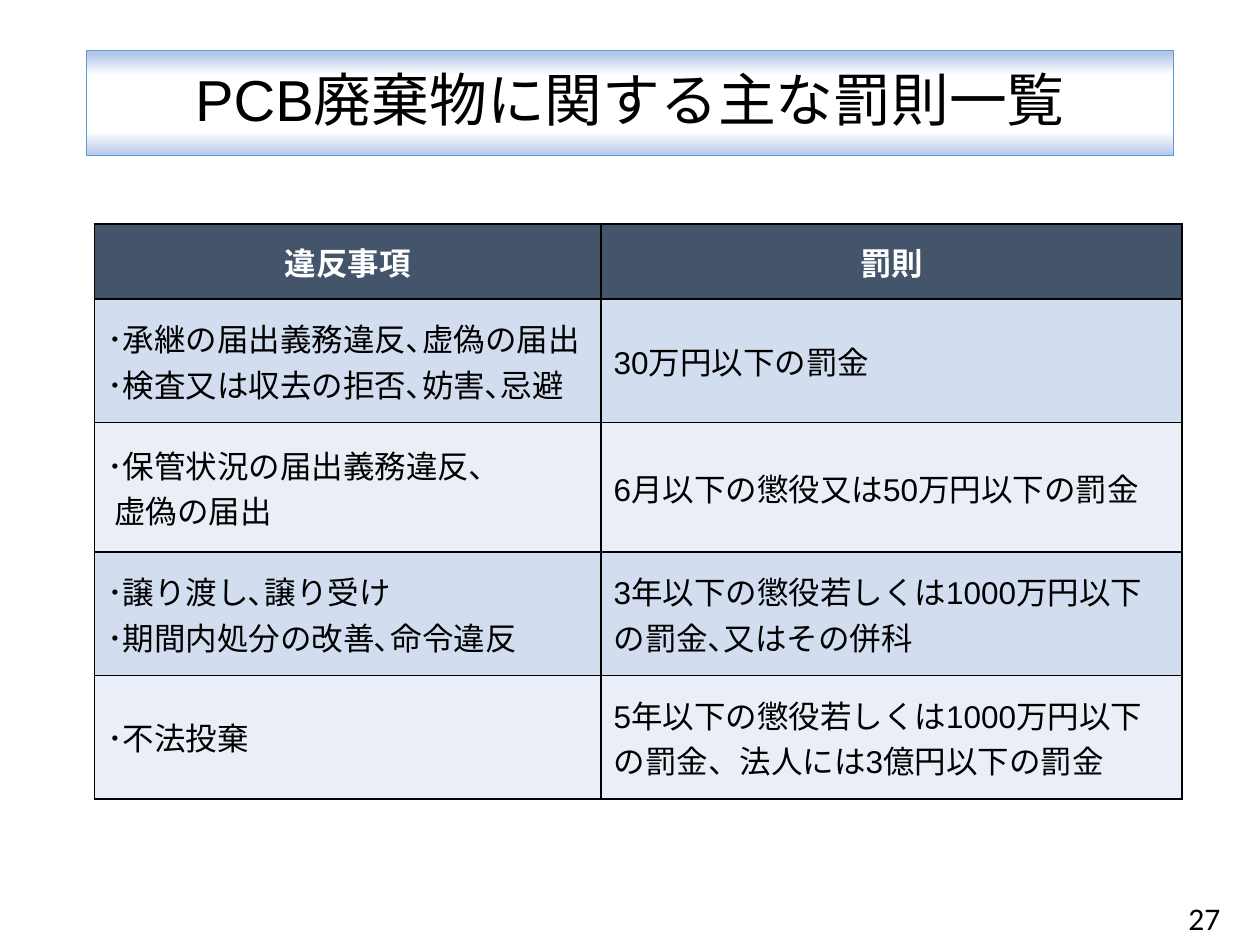
from lxml import etree
from pptx import Presentation
from pptx.dml.color import RGBColor
from pptx.enum.lang import MSO_LANGUAGE_ID
from pptx.enum.shapes import MSO_SHAPE
from pptx.enum.text import MSO_ANCHOR, PP_ALIGN
from pptx.oxml.ns import qn
from pptx.util import Pt

RECTANGLE = MSO_SHAPE.RECTANGLE
MIDDLE = MSO_ANCHOR.MIDDLE
LEFT, CENTER = PP_ALIGN.LEFT, PP_ALIGN.CENTER
JAPANESE = MSO_LANGUAGE_ID.JAPANESE

BLACK, WHITE = "000000", "FFFFFF"
HEADER_FILL = "44546A"
BAND_FILLS = ("D2DEEF", "EAEFF7")
TITLE_LINE = "5B9BD5"
TITLE_GRADIENT = [(3, "B4C7E7"), (23, WHITE), (77, WHITE), (100, "B4C7E7")]

HEADERS = ("違反事項", "罰則")
PENALTIES = [
    ("･承継の届出義務違反､虚偽の届出\n･検査又は収去の拒否､妨害､忌避", "30万円以下の罰金"),
    ("･保管状況の届出義務違反､\n 虚偽の届出", "6月以下の懲役又は50万円以下の罰金"),
    ("･譲り渡し､譲り受け\n･期間内処分の改善､命令違反",
     "3年以下の懲役若しくは1000万円以下の罰金､又はその併科"),
    ("･不法投棄", "5年以下の懲役若しくは1000万円以下の罰金、法人には3億円以下の罰金"),
]
COLUMN_WIDTHS = (289.5, 332)
ROW_HEIGHTS = (43, 70.5, 74, 70.5, 70.5)


def color(value):
    return RGBColor.from_string(value)


def write_text(frame, text, font="Arial", size=18, fill=BLACK, bold=False,
               align=LEFT, spacing=None):
    """Write one paragraph for each line of the text."""
    for index, line in enumerate(text.split("\n")):
        paragraph = frame.add_paragraph() if index else frame.paragraphs[0]
        paragraph.alignment = align
        paragraph.line_spacing = spacing
        run = paragraph.add_run()
        run.text = line
        run.font.name = font
        run.font.size = Pt(size)
        run.font.bold = bold
        run.font.color.rgb = color(fill)
        run.font.language_id = JAPANESE


def set_gradient(shape, stops, angle):
    """Give the shape a linear gradient with any number of stops."""
    shape.fill.gradient()
    shape.fill.gradient_angle = 0
    gradient = shape.fill._xPr.find(qn("a:gradFill"))
    stop_list = gradient.find(qn("a:gsLst"))
    for old_stop in list(stop_list):
        stop_list.remove(old_stop)
    for position, value in stops:
        stop = etree.SubElement(stop_list, qn("a:gs"), pos=str(position * 1000))
        etree.SubElement(stop, qn("a:srgbClr"), val=value)
    gradient.find(qn("a:lin")).set("ang", str(angle * 60000))


def set_borders(cell, value, width):
    """Draw all four sides of a cell; call before filling the cell."""
    properties = cell._tc.get_or_add_tcPr()
    for side in ("a:lnL", "a:lnR", "a:lnT", "a:lnB"):
        line = etree.SubElement(properties, qn(side), w=str(Pt(width)))
        solid = etree.SubElement(line, qn("a:solidFill"))
        etree.SubElement(solid, qn("a:srgbClr"), val=value)


def add_title(slide, left, top, width, height):
    shape = slide.shapes.add_shape(RECTANGLE, Pt(left), Pt(top), Pt(width), Pt(height))
    shape.shadow.inherit = False
    set_gradient(shape, TITLE_GRADIENT, 90)
    shape.line.color.rgb = color(TITLE_LINE)
    shape.line.width = Pt(0.75)
    shape.text_frame.vertical_anchor = MIDDLE
    write_text(shape.text_frame, "PCB廃棄物に関する主な罰則一覧", size=33,
               align=CENTER, spacing=0.9)


def add_penalty_table(slide, left, top):
    rows = [HEADERS, *PENALTIES]
    table = slide.shapes.add_table(
        len(rows), len(HEADERS), Pt(left), Pt(top),
        Pt(sum(COLUMN_WIDTHS)), Pt(sum(ROW_HEIGHTS))).table
    for column, width in zip(table.columns, COLUMN_WIDTHS):
        column.width = Pt(width)
    for row, height in zip(table.rows, ROW_HEIGHTS):
        row.height = Pt(height)

    for row_index, texts in enumerate(rows):
        is_header = row_index == 0
        fill = HEADER_FILL if is_header else BAND_FILLS[(row_index - 1) % 2]
        for column_index, text in enumerate(texts):
            cell = table.cell(row_index, column_index)
            cell.vertical_anchor = MIDDLE
            set_borders(cell, BLACK, 1)
            cell.fill.solid()
            cell.fill.fore_color.rgb = color(fill)
            if is_header:
                write_text(cell.text_frame, text, font="Calibri", fill=WHITE,
                           bold=True, align=CENTER)
            else:
                write_text(cell.text_frame, text)


def add_slide_number(slide, left, top, width, height):
    box = slide.shapes.add_textbox(Pt(left), Pt(top), Pt(width), Pt(height))
    box.text_frame.word_wrap = True
    write_text(box.text_frame, "27", font="Calibri")


def main():
    presentation = Presentation()
    presentation.slide_width = Pt(720)
    presentation.slide_height = Pt(540)
    slide = presentation.slides.add_slide(presentation.slide_layouts[6])

    add_slide_number(slide, 672, 510, 39.5, 29)
    add_penalty_table(slide, 54, 128)
    add_title(slide, 49.5, 29, 621, 60)

    presentation.save("out.pptx")


if __name__ == "__main__":
    main()
